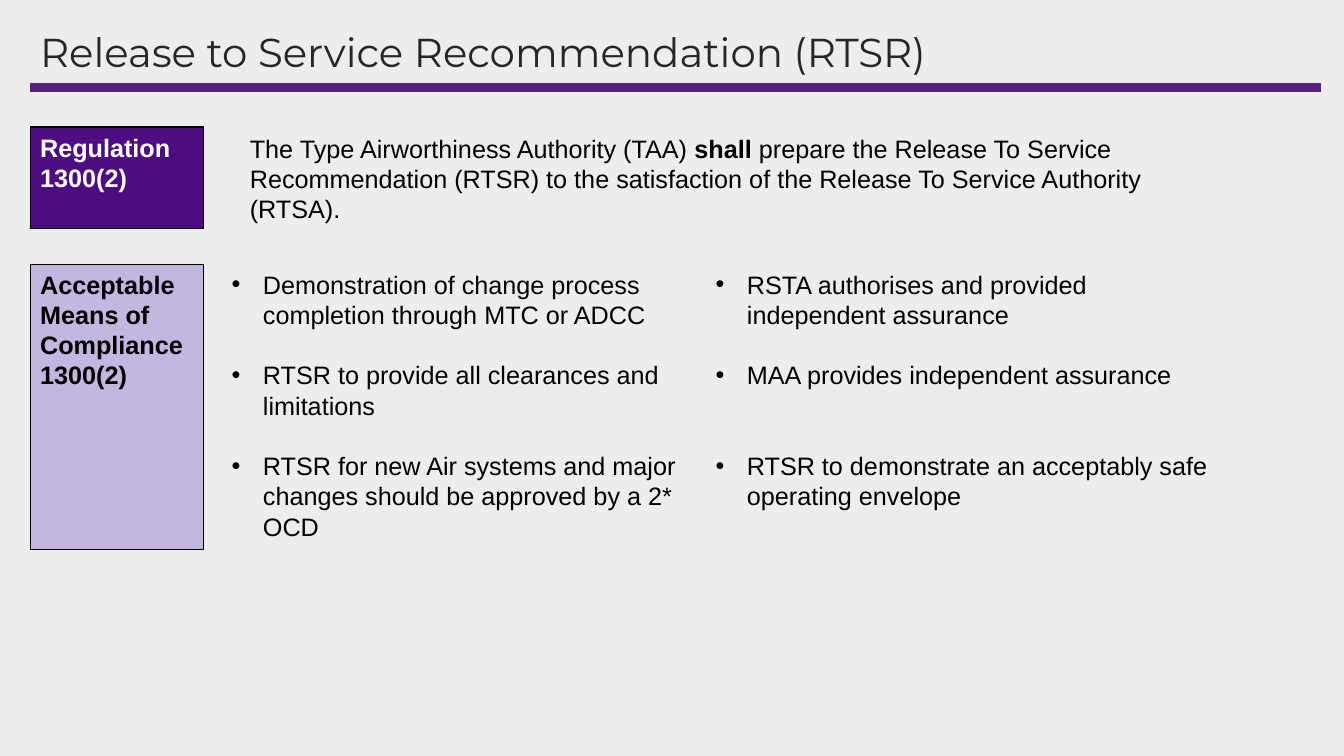
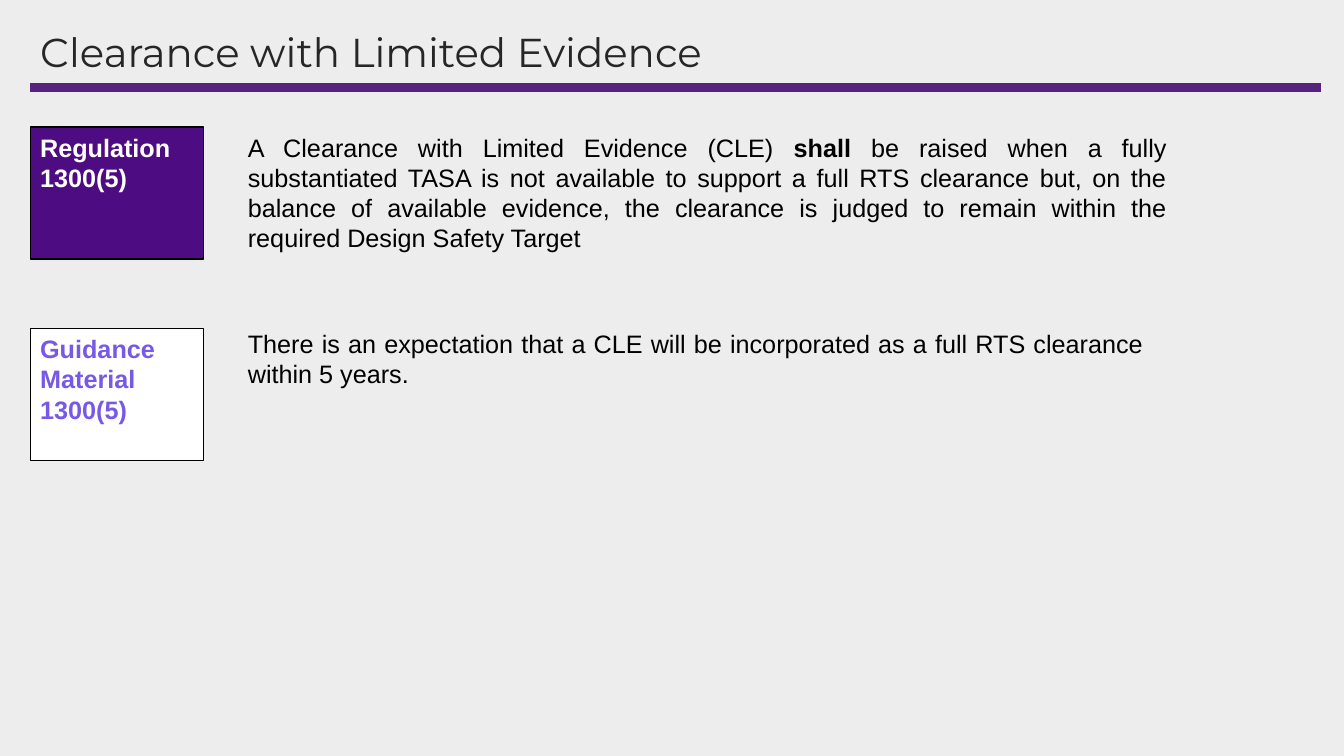
from dataclasses import dataclass
from lxml.etree import SubElement
from pptx import Presentation
from pptx.dml.color import RGBColor
from pptx.enum.shapes import MSO_CONNECTOR, MSO_SHAPE
from pptx.enum.text import MSO_ANCHOR, PP_ALIGN
from pptx.oxml.ns import qn
from pptx.util import Inches, Pt


@dataclass(frozen=True)
class Theme:
    background: str = "EDEDED"
    rule: str = "56227D"
    title: str = "262626"
    ink: str = "000000"
    regulation: str = "4E0C82"
    compliance: str = "C3B6E0"
    paper: str = "FFFFFF"
    guidance: str = "7858E6"
    title_font: str = "Montserrat"
    body_font: str = "Arial"
    title_size: float = 28.8
    body_size: float = 18
    blank_line: float = 21.6
    rule_width: float = 6
    border_width: float = 0.75


THEME = Theme()
WIDTH, HEIGHT = 13.33, 7.5
MARGIN = 0.3
CONTENT_WIDTH = 12.8
LABEL_WIDTH = 1.72
FIRST_ROW = 1.26
COMPLIANCE_ROW = 2.62
GUIDANCE_ROW = 3.26
TEXT_COLUMN = 2.36
BULLET_COLUMNS = ((2.2, 4.62), (7, 5.27))
BULLET_INDENT = 0.31


def colour(value):
    return RGBColor.from_string(value)


def add_span(para, text, ink=THEME.ink, bold=False,
             font=THEME.body_font, size=THEME.body_size):
    span = para.add_run()
    span.text = text
    span.font.name = font
    span.font.size = Pt(size)
    span.font.bold = bold
    span.font.color.rgb = colour(ink)


def add_box(page, left, top, width, height):
    box = page.shapes.add_textbox(*map(Inches, (left, top, width, height)))
    box.text_frame.word_wrap = True
    return box.text_frame


def add_rule(page):
    rule = page.shapes.add_connector(
        MSO_CONNECTOR.STRAIGHT, Inches(MARGIN), Inches(0.87),
        Inches(MARGIN + CONTENT_WIDTH), Inches(0.87))
    rule.line.color.rgb = colour(THEME.rule)
    rule.line.width = Pt(THEME.rule_width)
    SubElement(rule._element.spPr, qn("a:effectLst"))


def add_page(deck, title):
    page = deck.slides.add_slide(deck.slide_layouts[6])
    add_rule(page)
    frame = add_box(page, MARGIN, 0.28, CONTENT_WIDTH, 0.53)
    frame.vertical_anchor = MSO_ANCHOR.MIDDLE
    para = frame.paragraphs[0]
    para.line_spacing = 0.9
    add_span(para, title, THEME.title, font=THEME.title_font, size=THEME.title_size)
    return page


def add_label(page, text, top, height, fill, ink):
    label = page.shapes.add_shape(
        MSO_SHAPE.RECTANGLE, *map(Inches, (MARGIN, top, LABEL_WIDTH, height)))
    label.shadow.inherit = False
    label.fill.solid()
    label.fill.fore_color.rgb = colour(fill)
    label.line.color.rgb = colour(THEME.ink)
    label.line.width = Pt(THEME.border_width)
    frame = label.text_frame
    frame.word_wrap = True
    frame.vertical_anchor = MSO_ANCHOR.TOP
    para = frame.paragraphs[0]
    para.alignment = PP_ALIGN.LEFT
    add_span(para, text, ink, bold=True)


def add_statement(page, spans, left, top, width, height, alignment=PP_ALIGN.LEFT):
    para = add_box(page, left, top, width, height).paragraphs[0]
    para.alignment = alignment
    for text, bold in spans:
        add_span(para, text, bold=bold)


def add_bullets(page, items, left, top, width, height):
    frame = add_box(page, left, top, width, height)
    for index, (text, blank_lines) in enumerate(items):
        para = frame.add_paragraph() if index else frame.paragraphs[0]
        properties = para._p.get_or_add_pPr()
        properties.set("marL", str(Inches(BULLET_INDENT)))
        properties.set("indent", str(-Inches(BULLET_INDENT)))
        SubElement(properties, qn("a:buFont"), typeface=THEME.body_font)
        SubElement(properties, qn("a:buChar"), char="•")
        para.space_after = Pt(blank_lines * THEME.blank_line)
        add_span(para, text)


def build_recommendation(deck):
    page = add_page(deck, "Release to Service Recommendation (RTSR)")
    add_label(page, "Regulation 1300(2)", FIRST_ROW, 1.01, THEME.regulation, THEME.paper)
    add_statement(page, (
        ("The Type Airworthiness Authority (TAA) ", False),
        ("shall", True),
        (" prepare the Release To Service Recommendation (RTSR) to the satisfaction "
         "of the Release To Service Authority (RTSA).", False),
    ), 2.38, 1.27, 9.71, 1.01)
    add_label(page, "Acceptable Means of Compliance 1300(2)", COMPLIANCE_ROW, 2.83,
              THEME.compliance, THEME.ink)
    columns = (
        (("Demonstration of change process completion through MTC or ADCC", 1),
         ("RTSR to provide all clearances and limitations", 1),
         ("RTSR for new Air systems and major changes should be approved by a 2* OCD", 0)),
        (("RSTA authorises and provided independent assurance", 1),
         ("MAA provides independent assurance", 2),
         ("RTSR to demonstrate an acceptably safe operating envelope", 0)),
    )
    for items, (left, width) in zip(columns, BULLET_COLUMNS):
        add_bullets(page, items, left, COMPLIANCE_ROW, width, 2.83)


def build_clearance(deck):
    page = add_page(deck, "Clearance with Limited Evidence")
    add_label(page, "Regulation 1300(5)", FIRST_ROW, 1.31, THEME.regulation, THEME.paper)
    add_label(page, "Guidance Material 1300(5)", GUIDANCE_ROW, 1.31,
              THEME.paper, THEME.guidance)
    add_statement(page, (
        ("A Clearance with Limited Evidence (CLE) ", False),
        ("shall", True),
        (" be raised when a fully substantiated TASA is not available to support a full "
         "RTS clearance but, on the balance of available evidence, the clearance is "
         "judged to remain within the required Design Safety Target", False),
    ), TEXT_COLUMN, FIRST_ROW, 9.31, 1.31, PP_ALIGN.JUSTIFY)
    add_statement(page, (
        ("There is an expectation that a CLE will be incorporated as a full RTS "
         "clearance within 5 years.", False),
    ), TEXT_COLUMN, 3.21, 9.08, 0.71, PP_ALIGN.JUSTIFY)


def main():
    deck = Presentation()
    deck.slide_width, deck.slide_height = Inches(WIDTH), Inches(HEIGHT)
    background = deck.slide_master.background.fill
    background.solid()
    background.fore_color.rgb = colour(THEME.background)
    build_recommendation(deck)
    build_clearance(deck)
    deck.save("out.pptx")


if __name__ == "__main__":
    main()
